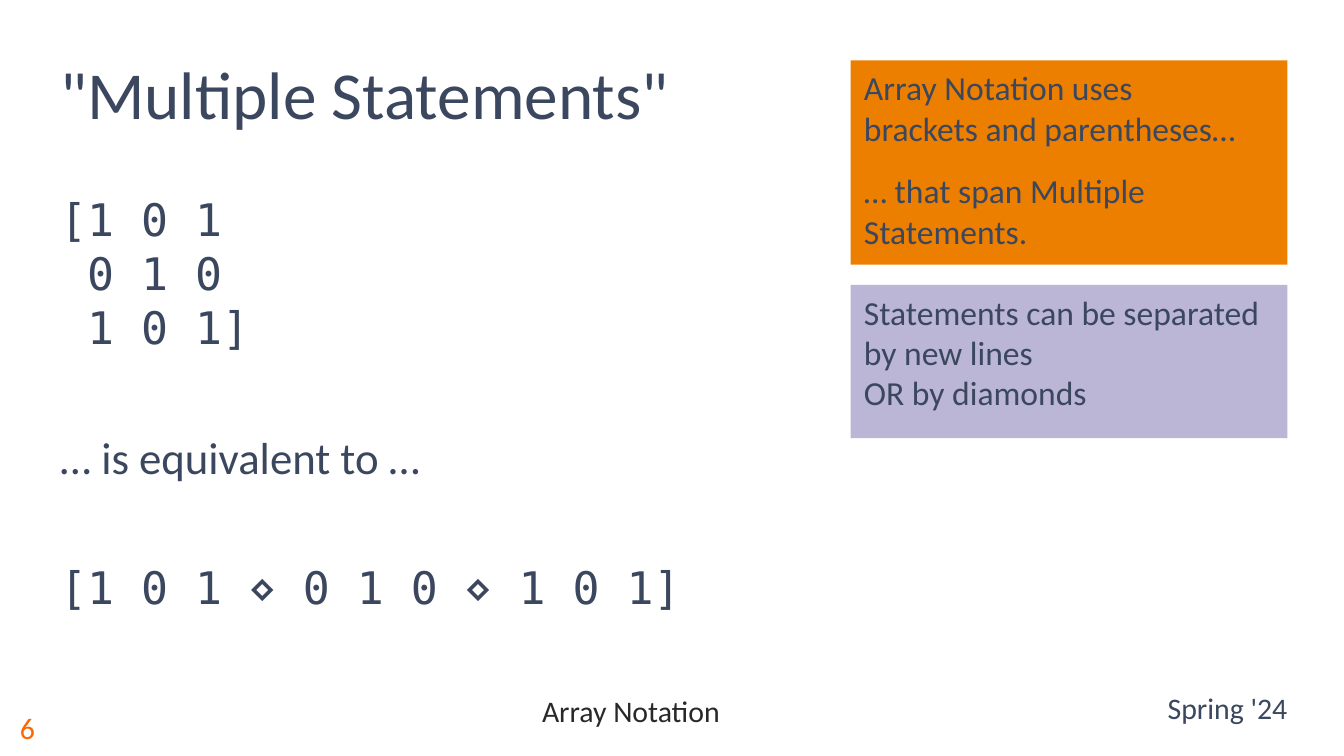
from pptx import Presentation
from pptx.dml.color import RGBColor
from pptx.enum.shapes import MSO_SHAPE
from pptx.enum.text import MSO_ANCHOR, PP_ALIGN
from pptx.util import Inches, Pt

RECT = MSO_SHAPE.RECTANGLE
TOP, MIDDLE, BOTTOM = MSO_ANCHOR.TOP, MSO_ANCHOR.MIDDLE, MSO_ANCHOR.BOTTOM
LEFT, CENTER = PP_ALIGN.LEFT, PP_ALIGN.CENTER

NAVY = RGBColor(0x3B, 0x47, 0x5E)
BLACK = RGBColor(0x28, 0x28, 0x28)
ORANGE = RGBColor(0xFF, 0x66, 0x00)
AMBER = RGBColor(0xED, 0x7F, 0x00)
LILAC = RGBColor(0xBB, 0xB5, 0xD6)
SANS, MONO = "Calibri", "DejaVu Sans Mono"

# Slide in 16:9
deck = Presentation()
deck.slide_width = Inches(10)
deck.slide_height = Inches(10) * 9 // 16
slide = deck.slides.add_slide(deck.slide_layouts[6])


def write(para, text, size, color=NAVY, face=SANS, **form):
    """Fill a paragraph; form holds its paragraph format values."""
    para.text = text
    for key, value in {"alignment": LEFT, **form}.items():
        setattr(para, key, value)
    for run in para.runs:
        for key, value in {"name": face, "size": Pt(size)}.items():
            setattr(run.font, key, value)
        run.font.color.rgb = color


def add_box(area, anchor=TOP, fill=None, wrap=True):
    """Add a text box, or a filled panel, and return its text frame."""
    area = [Inches(n) for n in area]
    if fill is None:
        box = slide.shapes.add_textbox(*area)
    else:
        box = slide.shapes.add_shape(RECT, *area)
        box.shadow.inherit = False
        box.fill.solid()
        box.fill.fore_color.rgb = fill
        box.line.fill.background()
    frame = box.text_frame
    frame.word_wrap = wrap
    frame.vertical_anchor = anchor
    return frame


# Footer: topic, page number, term
topic = add_box((0.83, 5.09, 7.73, 0.44), MIDDLE)
write(topic.paragraphs[0], "Array Notation", 16, BLACK,
      alignment=CENTER, line_spacing=0.8)
page = add_box((0.05, 5.19, 0.73, 0.44), MIDDLE)
write(page.paragraphs[0], "6", 16, ORANGE)
term = add_box((8.59, 5.08, 1.16, 0.37), wrap=False)
write(term.paragraphs[0], "Spring '24", 16)

# Title
title = add_box((0.35, 0.29, 7.66, 0.75), BOTTOM)
write(title.paragraphs[0], '"Multiple Statements"', 36)

# Code in both forms, one blank line's height apart
body = add_box((0.35, 1.38, 6.66, 3.55))
parts = [
    ("[1 0 1\n 0 1 0\n 1 0 1]", MONO),
    ("… is equivalent to …", SANS),
    ("[1 0 1 ⋄ 0 1 0 ⋄ 1 0 1]", MONO),
]
for i, (text, face) in enumerate(parts):
    para = body.add_paragraph() if i else body.paragraphs[0]
    write(para, text, 24, face=face, space_after=Pt(12),
          space_before=Pt(29 if i else 0))

# Side panels
panels = [
    (0.45, 1.52, AMBER, ["Array Notation uses\nbrackets and parentheses…",
                         "… that span Multiple Statements."]),
    (2.12, 1.14, LILAC, ["Statements can be separated by new lines\n"
                         "OR by diamonds"]),
]
for top, height, fill, notes in panels:
    frame = add_box((6.33, top, 3.25, height), fill=fill)
    for i, note in enumerate(notes):
        para = frame.add_paragraph() if i else frame.paragraphs[0]
        write(para, note, 18, space_after=Pt(12))

deck.save("out.pptx")
